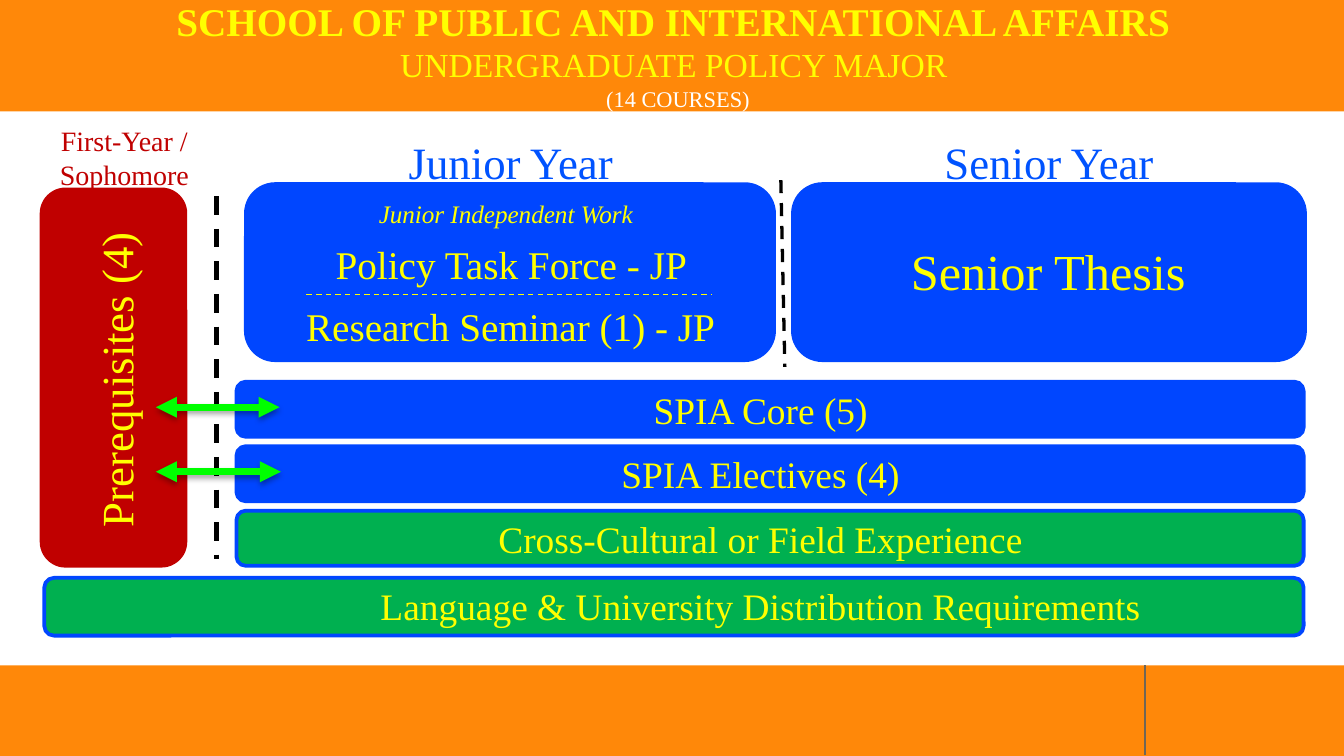
"""Build the slide that maps the courses of the undergraduate policy major."""
import pptx
import pptx.dml.color
import pptx.enum.dml
import pptx.enum.shapes
import pptx.enum.text
import pptx.oxml
import pptx.oxml.ns
import pptx.util
from pptx.util import Inches

SHAPE = pptx.enum.shapes.MSO_SHAPE
ALIGN = pptx.enum.text.PP_ALIGN
FONT = "Times New Roman"
ORANGE, BLUE, GREEN, RED, YELLOW = "FF8809", "0046FF", "00B050", "C00000", "FFFF00"


def paint(target, color):
    if hasattr(target, "solid"):
        target.solid()
        target = target.fore_color
    else:
        target = target.color
    target.rgb = pptx.dml.color.RGBColor.from_string(color)


def add_label(place, text, size, color, align=ALIGN.CENTER, wrap=True):
    label = slide.shapes.add_textbox(*map(Inches, place))
    label.text_frame.word_wrap = wrap
    label.text_frame.text = text
    for paragraph in label.text_frame.paragraphs:
        paragraph.alignment = align
        paragraph.font.name = FONT
        paragraph.font.size = pptx.util.Pt(size)
        paint(paragraph.font, color)
    return label


deck = pptx.Presentation()
deck.slide_width = Inches(10)
deck.slide_height = deck.slide_width * 9 // 16
slide = deck.slides.add_slide(deck.slide_layouts[6])

bars = [
    (1.76, 2.84, 7.94, 0.41, BLUE, "SPIA Core (5)", 1.82),
    (1.76, 3.32, 7.94, 0.41, BLUE, "SPIA Electives (4)", 2.3),
    (1.76, 3.8, 7.94, 0.41, GREEN, "Cross-Cultural or Field Experience", 4.13),
    (0.33, 4.3, 9.37, 0.43, GREEN, "Language & University Distribution Requirements", 5.89),
]
blocks = [
    (SHAPE.RECTANGLE, (0, 0, 10, 0.83), ORANGE, None),
    (SHAPE.RECTANGLE, (0, 4.95, 10, 0.68), ORANGE, None),
    (SHAPE.ROUNDED_RECTANGLE, (1.83, 1.37, 3.93, 1.31), BLUE, BLUE),
    (SHAPE.ROUNDED_RECTANGLE, (5.9, 1.37, 3.81, 1.31), BLUE, BLUE),
    (SHAPE.ROUNDED_RECTANGLE, (0.31, 1.41, 1.07, 2.8), RED, RED),
]
blocks += [(SHAPE.ROUNDED_RECTANGLE, bar[:4], bar[4], BLUE) for bar in bars]
for kind, place, fill, outline in blocks:
    block = slide.shapes.add_shape(kind, *map(Inches, place))
    block.shadow.inherit = False
    paint(block.fill, fill)
    if outline:
        paint(block.line, outline)
        block.line.width = pptx.util.Pt(2)
    else:
        block.line.fill.background()

title = slide.shapes.add_textbox(Inches(0.09), Inches(0.19), Inches(9.91), Inches(0.43)).text_frame
title.word_wrap = True
title.vertical_anchor = pptx.enum.text.MSO_ANCHOR.MIDDLE
title.margin_left = title.margin_right = Inches(0.07)
title.margin_top = title.margin_bottom = Inches(0.04)
heading = title.paragraphs[0]
heading.alignment = ALIGN.CENTER
for number, (text, size, color) in enumerate([
    ("SCHOOL OF PUBLIC AND INTERNATIONAL AFFAIRS ", 21, YELLOW),
    ("UNDERGRADUATE POLICY MAJOR ", 18, YELLOW),
    ("(14 COURSES)", 12, "FFFFFF"),
]):
    if number:
        heading.add_line_break()
    run = heading.add_run()
    run.text = text
    run.font.name = FONT
    run.font.size = pptx.util.Pt(size)
    run.font.bold = number == 0
    paint(run.font, color)

add_label((0.17, 0.87, 1.51, 0.61), "First-Year /\nSophomore", 15, RED)
add_label((2.61, 0.95, 2.38, 0.5), "Junior Year", 24, "0053FF")
add_label((6.79, 0.95, 2.03, 0.5), "Senior Year", 24, "0053FF")
add_label((6.18, 1.74, 3.24, 0.56), "Senior Thesis", 27, YELLOW)
prerequisites = add_label((-0.35, 2.56, 2.42, 0.5), "Prerequisites (4)", 24, YELLOW, ALIGN.LEFT, False)
prerequisites.rotation = 270
for left, top, width, height, fill, text, text_width in bars:
    add_label((5.66 - text_width / 2, top - 0.01, text_width, 0.44), text, 20, YELLOW, wrap=False)
add_label((2.32, 1.74, 2.97, 0.45), "Policy Task Force - JP", 21, YELLOW)
add_label((2.16, 2.2, 3.28, 0.45), "Research Seminar (1) - JP", 21, YELLOW, wrap=False)
independent_work = add_label((2.72, 1.43, 2.16, 0.33), "Junior Independent Work", 13.5, YELLOW, ALIGN.LEFT)
independent_work.text_frame.paragraphs[0].font.italic = True

for ends, color, weight, style in [
    ((8.52, 4.95, 8.52, 5.62), "6F6657", 0.75, "solid"),
    ((1.61, 1.46, 1.61, 4.16), "000000", 2.5, "dash"),
    ((5.81, 1.34, 5.84, 2.73), "000000", 1.75, "dash"),
    ((2.28, 2.19, 5.3, 2.19), YELLOW, 0.75, "dash"),
    ((1.16, 3.03, 2.08, 3.03), "00FF00", 3.75, "arrow"),
    ((1.16, 3.51, 2.09, 3.51), "00FF00", 3.75, "arrow"),
]:
    rule = slide.shapes.add_connector(pptx.enum.shapes.MSO_CONNECTOR.STRAIGHT, *map(Inches, ends))
    paint(rule.line, color)
    rule.line.width = pptx.util.Pt(weight)
    if style == "dash":
        rule.line.dash_style = pptx.enum.dml.MSO_LINE.DASH
    shadow = ""
    if style == "arrow":
        outline = rule.line._get_or_add_ln()
        for end in ("headEnd", "tailEnd"):
            outline.append(pptx.oxml.parse_xml(
                f'<a:{end} {pptx.oxml.ns.nsdecls("a")} type="triangle"/>'))
        shadow = (
            '<a:outerShdw blurRad="39370" dist="22860" dir="5400000" rotWithShape="0">'
            '<a:srgbClr val="000000"><a:alpha val="35000"/></a:srgbClr></a:outerShdw>'
        )
    rule._element.spPr.append(pptx.oxml.parse_xml(
        f'<a:effectLst {pptx.oxml.ns.nsdecls("a")}>{shadow}</a:effectLst>'))

deck.save("out.pptx")
